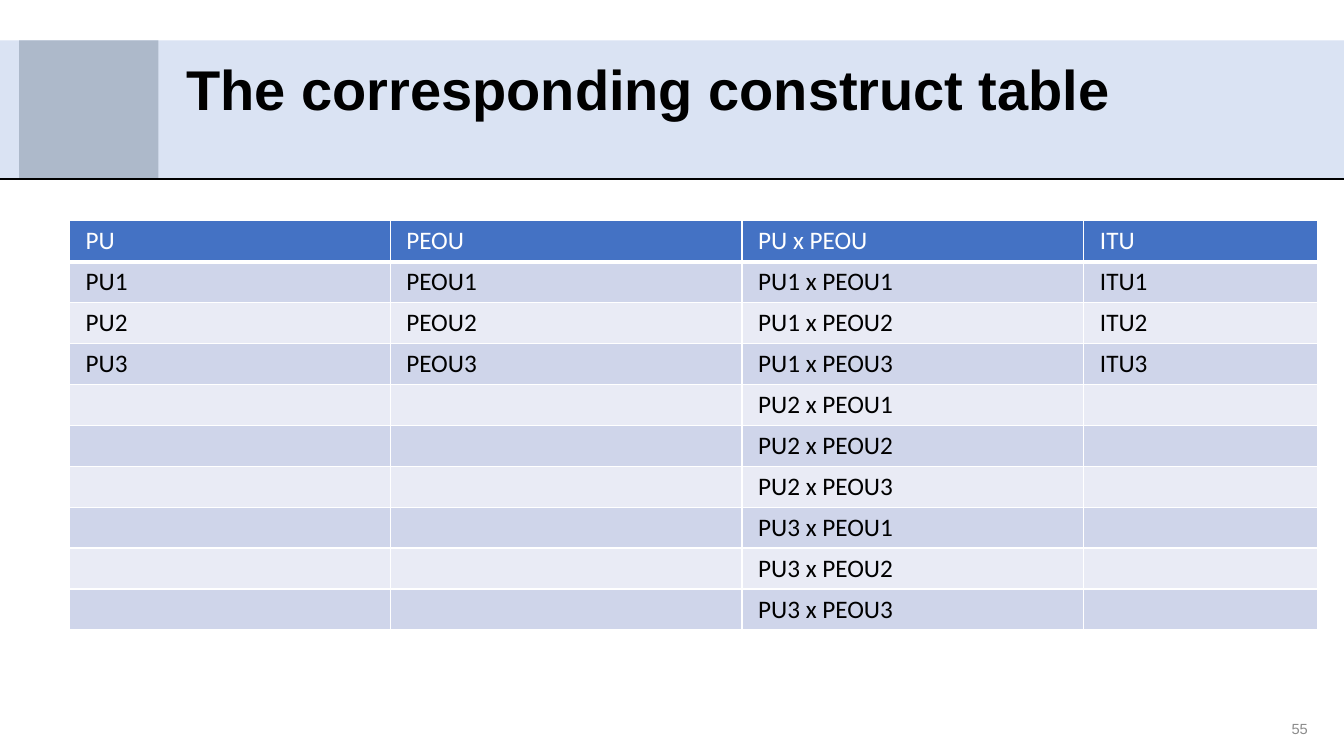
from itertools import product

from lxml import etree
from pptx import Presentation
from pptx.dml.color import RGBColor
from pptx.enum.shapes import MSO_CONNECTOR, MSO_SHAPE
from pptx.enum.text import MSO_ANCHOR, PP_ALIGN
from pptx.oxml.ns import qn
from pptx.util import Emu, Pt

RECTANGLE = MSO_SHAPE.RECTANGLE
STRAIGHT = MSO_CONNECTOR.STRAIGHT
MIDDLE = MSO_ANCHOR.MIDDLE
LEFT, RIGHT = PP_ALIGN.LEFT, PP_ALIGN.RIGHT
EMU_PER_PX = 9144
SLIDE_W, SLIDE_H = 1333, 750
COLORS = {
    "band": "DAE3F3", "block": "ADB9CA", "ink": "000000", "white": "FFFFFF",
    "header": "4472C4", "odd_row": "CFD5EA", "even_row": "E9EBF5", "number": "8C8C8C",
}
TITLE_FONT = {"name": "Arial", "size": Pt(40), "bold": True}
NUMBER_FONT = {"name": "Arial", "size": Pt(10.5), "bold": False}
CELL_FONT = {"name": "Calibri", "size": Pt(18), "bold": False}
CELL_MARGINS = {"margin_left": 16, "margin_right": 16, "margin_top": 5, "margin_bottom": 5}
COLUMN_WIDTHS = [318, 349, 339, 232]
ITEMS = [1, 2, 3]
CONSTRUCTS = {
    "PU": [f"PU{i}" for i in ITEMS],
    "PEOU": [f"PEOU{i}" for i in ITEMS],
    "PU x PEOU": [f"PU{i} x PEOU{j}" for i, j in product(ITEMS, ITEMS)],
    "ITU": [f"ITU{i}" for i in ITEMS],
}


def px(length):
    """Turn px into EMU."""
    return Emu(length * EMU_PER_PX)


def rgb(role):
    """Look up the colour of a role."""
    return RGBColor.from_string(COLORS[role])


def write(paragraph, text, font, role):
    """Write one formatted run into a paragraph."""
    run = paragraph.add_run()
    run.text = text
    for attribute, value in font.items():
        setattr(run.font, attribute, value)
    run.font.color.rgb = rgb(role)


def add_panel(slide, box, role):
    """Draw a plain filled rectangle."""
    panel = slide.shapes.add_shape(RECTANGLE, *map(px, box))
    panel.shadow.inherit = False
    panel.fill.solid()
    panel.fill.fore_color.rgb = rgb(role)
    panel.line.fill.background()


def add_label(slide, box, text, font, role, align):
    """Place a wrapped, vertically centred text box."""
    frame = slide.shapes.add_textbox(*map(px, box)).text_frame
    frame.word_wrap = True
    frame.vertical_anchor = MIDDLE
    frame.paragraphs[0].alignment = align
    write(frame.paragraphs[0], text, font, role)


def add_title_band(slide, box, title):
    """Draw the band with its square, rule and title."""
    left, top, width, height = box
    add_panel(slide, box, "band")
    add_panel(slide, (left + 19, top, height, height), "block")
    bottom = top + height
    rule = slide.shapes.add_connector(STRAIGHT, *map(px, (left, bottom, left + width, bottom)))
    rule.line.width = Pt(1.5)
    rule.line.color.rgb = rgb("ink")
    etree.SubElement(rule.line._get_or_add_ln().getparent(), qn("a:effectLst"))
    add_label(slide, (left + 175, top, width - 175, 95), title, TITLE_FONT, "ink", LEFT)


def set_borders(cell, bottom_width):
    """Give a cell white borders, with its own bottom width."""
    properties = cell._tc.get_or_add_tcPr()
    for side, width in {"L": 1, "R": 1, "T": 1, "B": bottom_width}.items():
        border = etree.SubElement(properties, qn(f"a:ln{side}"), w=str(Pt(width)))
        fill = etree.SubElement(border, qn("a:solidFill"))
        etree.SubElement(fill, qn("a:srgbClr"), val=COLORS["white"])


def fill_cell(cell, text, row):
    """Style a cell by its row and write its text."""
    is_header = row == 0
    set_borders(cell, 3 if is_header else 1)
    role = "header" if is_header else "odd_row" if row % 2 else "even_row"
    cell.fill.solid()
    cell.fill.fore_color.rgb = rgb(role)
    for margin, length in CELL_MARGINS.items():
        setattr(cell, margin, px(length))
    if text:
        write(cell.text_frame.paragraphs[0], text, CELL_FONT, "white" if is_header else "ink")


def add_construct_table(slide, box):
    """Build the table with one column for each construct."""
    row_count = 1 + max(map(len, CONSTRUCTS.values()))
    frame = slide.shapes.add_table(row_count, len(CONSTRUCTS), *map(px, box))
    table = frame.table
    for column, width in zip(table.columns, COLUMN_WIDTHS):
        column.width = px(width)
    for column, (construct, indicators) in enumerate(CONSTRUCTS.items()):
        for row in range(row_count):
            entries = [construct, *indicators]
            text = entries[row] if row < len(entries) else ""
            fill_cell(table.cell(row, column), text, row)


def main():
    """Build and save the slide."""
    deck = Presentation()
    deck.slide_width, deck.slide_height = px(SLIDE_W), px(SLIDE_H)
    slide = deck.slides.add_slide(deck.slide_layouts[6])
    add_title_band(slide, (0, 40, SLIDE_W, 138), "The corresponding construct table")
    add_construct_table(slide, (69, 219, sum(COLUMN_WIDTHS), 406))
    add_label(slide, (1130, 710, 177, 25), "55", NUMBER_FONT, "number", RIGHT)
    deck.save("out.pptx")


if __name__ == "__main__":
    main()
